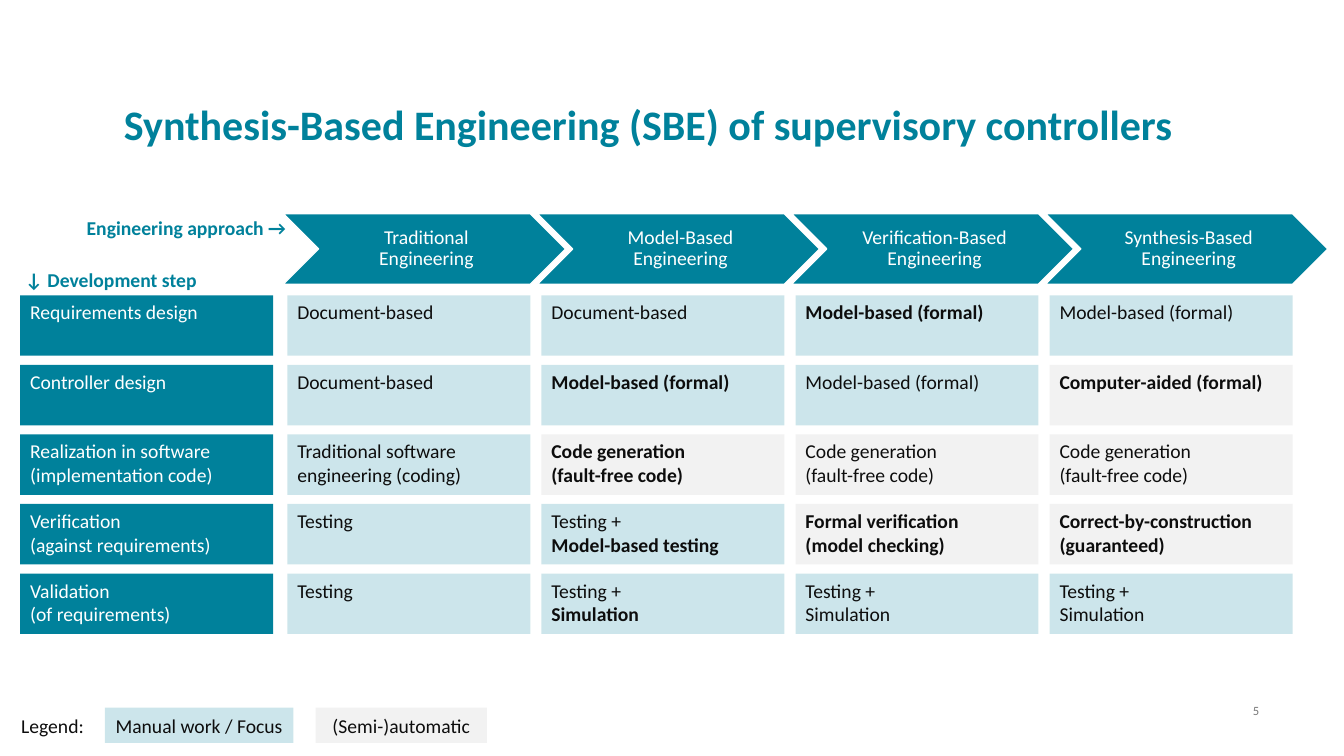
from lxml import etree
from pptx import Presentation
from pptx.dml.color import RGBColor
from pptx.enum import shapes, text
from pptx.oxml import ns
from pptx.util import Inches, Pt

TEAL, GREY, INK, WHITE = "00819B", "F2F2F2", "0D0D0D", "FFFFFF"
LEFT, CENTER, RIGHT = text.PP_ALIGN.LEFT, text.PP_ALIGN.CENTER, text.PP_ALIGN.RIGHT
TOP, MIDDLE = text.MSO_ANCHOR.TOP, text.MSO_ANCHOR.MIDDLE
PAD = (0.1, 0.05, 0.1, 0.05)
NONE = (0, 0, 0, 0)

PHASES = ["Traditional\vEngineering", "Model-Based\vEngineering",
          "Verification-Based\vEngineering", "Synthesis-Based\vEngineering"]
STEPS = ["Requirements design", "Controller design",
         "Realization in software\n(implementation code)",
         "Verification\n(against requirements)", "Validation\n(of requirements)"]
CODE = "Code generation\v(fault-free code)"
CELLS = [
    ["Document-based", "Document-based", "*Model-based (formal)", "Model-based (formal)"],
    ["Document-based", "*Model-based (formal)", "Model-based (formal)",
     "*Computer-aided (formal)"],
    ["Traditional software engineering (coding)", "*" + CODE, CODE, CODE],
    ["Testing", "Testing +\n*Model-based testing",
     "*Formal verification\n*(model checking)", "*Correct-by-construction (guaranteed)"],
    ["Testing", "Testing +\n*Simulation", "Testing +\nSimulation", "Testing +\nSimulation"],
]
AUTO = {(1, 3), (2, 1), (2, 2), (2, 3), (3, 2), (3, 3)}


def rgb(code):
    return RGBColor.from_string(code)


def write(shape, words, size=14, color=INK, bold=False, align=LEFT,
          anchor=TOP, pad=PAD, space=None, wrap=True):
    frame = shape.text_frame
    frame.word_wrap = wrap
    frame.vertical_anchor = anchor
    (frame.margin_left, frame.margin_top,
     frame.margin_right, frame.margin_bottom) = map(Inches, pad)
    for i, line in enumerate(words.split("\n")):
        para = frame.add_paragraph() if i else frame.paragraphs[0]
        para.text = line.lstrip("*")
        para.alignment = align
        para.line_spacing = space
        for run in para.runs:
            font = run.font
            font.name, font.size = "Calibri", Pt(size)
            font.bold = bold or line.startswith("*")
            font.color.rgb = rgb(color)


def label(slide, box, words, **style):
    write(slide.shapes.add_textbox(*map(Inches, box)), words, **style)


def block(slide, box, fill, words, kind=shapes.MSO_SHAPE.RECTANGLE,
          alpha=None, edge=None, **style):
    shape = slide.shapes.add_shape(kind, *map(Inches, box))
    shape.shadow.inherit = False
    shape.fill.solid()
    shape.fill.fore_color.rgb = rgb(fill)
    if alpha:
        tint = shape.fill._xPr.find(".//" + ns.qn("a:srgbClr"))
        etree.SubElement(tint, ns.qn("a:alpha"), val=str(alpha * 1000))
    if edge:
        shape.line.color.rgb = rgb(edge)
        shape.line.width = Pt(1)
    else:
        shape.line.fill.background()
    write(shape, words, **style)


def task(slide, box, words, auto, **style):
    if auto:
        block(slide, box, GREY, words, **style)
    else:
        block(slide, box, TEAL, words, alpha=20, **style)


def grid(slide):
    for col, phase in enumerate(PHASES):
        block(slide, (2.81 + 2.52 * col, 2.12, 2.8, 0.7), TEAL, phase,
              kind=shapes.MSO_SHAPE.CHEVRON, edge=WHITE, color=WHITE, align=CENTER,
              anchor=MIDDLE, pad=(0.06, 0.02, 0.02, 0.02), space=0.9)
    for row, (step, cells) in enumerate(zip(STEPS, CELLS)):
        top = 2.93 + 0.69 * row
        block(slide, (0.2, top, 2.51, 0.6), TEAL, step, color=WHITE)
        for col, words in enumerate(cells):
            task(slide, (2.85 + 2.52 * col, top, 2.41, 0.6), words, (row, col) in AUTO)


def legend(slide):
    label(slide, (0.21, 7.03, 0.73, 0.34), "Legend:", anchor=MIDDLE,
          pad=(0, 0.05, 0.1, 0.05), wrap=False)
    task(slide, (1.04, 7.02, 1.87, 0.35), "Manual work / Focus", False,
         align=CENTER, anchor=MIDDLE)
    task(slide, (3.13, 7.02, 1.7, 0.35), "(Semi-)automatic", True,
         align=CENTER, anchor=MIDDLE)


def main():
    deck = Presentation()
    deck.slide_width, deck.slide_height = Inches(13.33), Inches(7.5)
    slide = deck.slides.add_slide(deck.slide_layouts[6])
    label(slide, (1.23, 1.03, 11.3, 0.86),
          "Synthesis-Based Engineering (SBE) of supervisory controllers",
          size=30, color=TEAL, bold=True, pad=NONE, space=0.9)
    grid(slide)
    label(slide, (0.61, 2.14, 2.23, 0.24), "Engineering approach →",
          color=TEAL, bold=True, align=RIGHT, pad=NONE)
    label(slide, (0.25, 2.66, 1.88, 0.24), "↓ Development step",
          color=TEAL, bold=True, pad=NONE)
    legend(slide)
    label(slide, (12.2, 6.96, 0.29, 0.18), "5", size=9, color="787878",
          align=RIGHT, anchor=MIDDLE, pad=NONE)
    deck.save("out.pptx")


if __name__ == "__main__":
    main()
